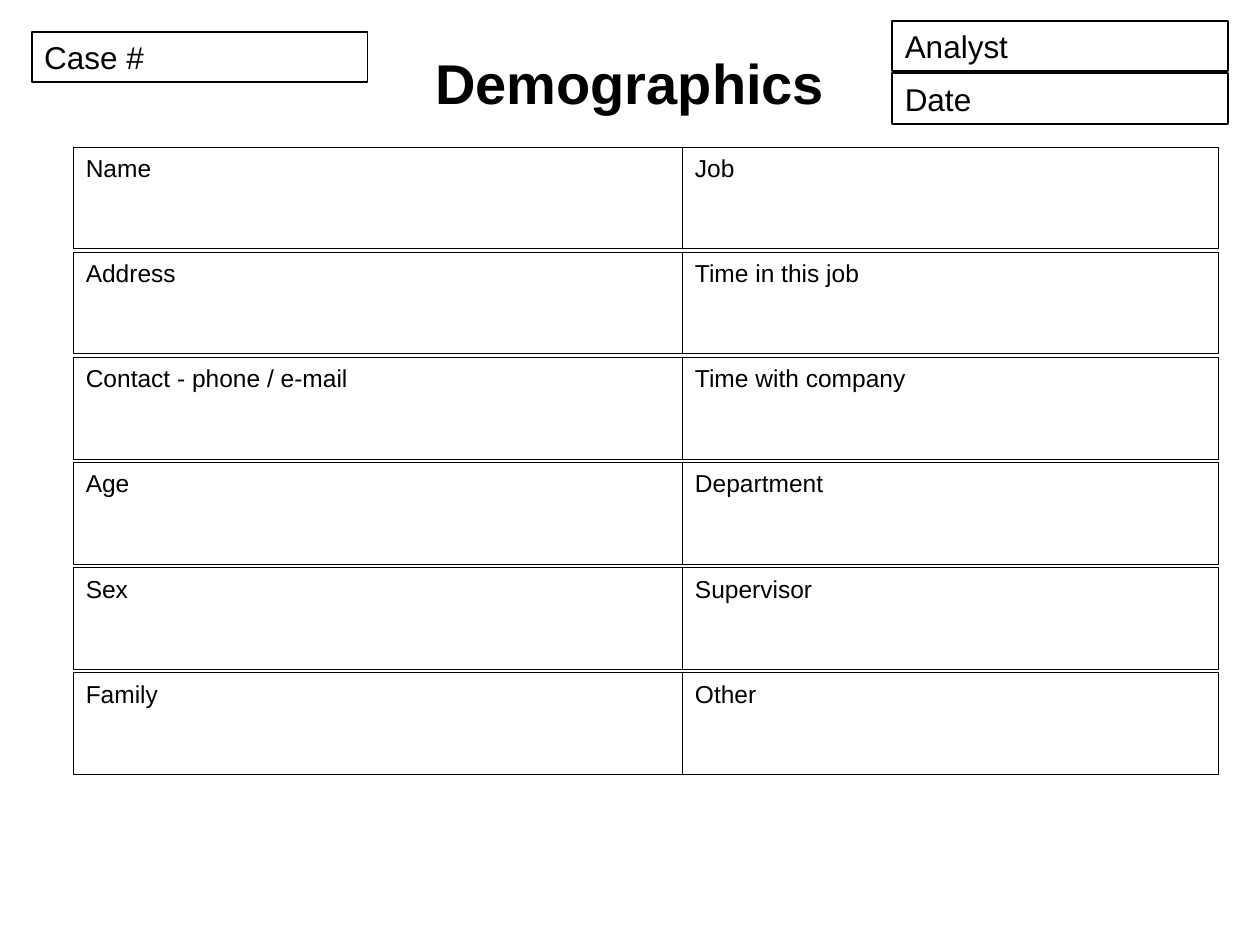
from dataclasses import dataclass

from pptx import Presentation
from pptx.dml.color import RGBColor
from pptx.enum.shapes import MSO_SHAPE
from pptx.enum.text import MSO_ANCHOR as Anchor, PP_ALIGN as Align
from pptx.util import Cm, Pt


@dataclass(frozen=True)
class Theme:
    """Colours, font, type sizes and line widths of the form."""
    ink: RGBColor = RGBColor(0, 0, 0)
    paper: RGBColor = RGBColor(255, 255, 255)
    font: str = "Arial"
    title_size: float = 32
    label_size: float = 18
    field_size: float = 14
    label_line: float = 1
    field_line: float = 0.25


THEME = Theme()

FIELD_ROWS = [
    ("Name", "Job"),
    ("Address", "Time in this job"),
    ("Contact - phone / e-mail", "Time with company"),
    ("Age", "Department"),
    ("Sex", "Supervisor"),
    ("Family", "Other"),
]


def write_text(shape, text, *, size, bold=False, align=Align.LEFT, anchor=Anchor.TOP):
    """Write one formatted paragraph into a shape."""
    frame = shape.text_frame
    frame.word_wrap = True
    frame.vertical_anchor = anchor
    paragraph = frame.paragraphs[0]
    paragraph.alignment = align
    run = paragraph.add_run()
    run.text = text
    run.font.name = THEME.font
    run.font.size = Pt(size)
    run.font.bold = bold
    run.font.color.rgb = THEME.ink


def add_entry_box(slide, text, left, top, width, height, *, size, line):
    """Add an outlined box with its label at the top left."""
    shape = slide.shapes.add_shape(
        MSO_SHAPE.RECTANGLE, Cm(left), Cm(top), Cm(width), Cm(height))
    shape.shadow.inherit = False
    shape.fill.background()
    shape.line.color.rgb = THEME.ink
    shape.line.width = Pt(line)
    write_text(shape, text, size=size)


def add_title(slide, text, left, top, width, height):
    """Add the centred heading."""
    box = slide.shapes.add_textbox(Cm(left), Cm(top), Cm(width), Cm(height))
    write_text(box, text, size=THEME.title_size, bold=True,
               align=Align.CENTER, anchor=Anchor.MIDDLE)


def add_label_stack(slide, labels, left, top, width, *, height=1.02, pitch=1.06):
    """Stack case label boxes downwards from the given corner."""
    for index, label in enumerate(labels):
        add_entry_box(slide, label, left, top + index * pitch, width, height,
                      size=THEME.label_size, line=THEME.label_line)


def add_field_grid(slide, rows, left, top, widths, *, height=2.05, pitch=2.12):
    """Lay out the form fields in adjoining columns and spaced rows."""
    for row_index, row in enumerate(rows):
        for column, label in enumerate(row):
            add_entry_box(slide, label, left + sum(widths[:column]),
                          top + row_index * pitch, widths[column], height,
                          size=THEME.field_size, line=THEME.field_line)


def main():
    """Build and save the demographics form."""
    presentation = Presentation()
    presentation.slide_width = Cm(25.4)
    presentation.slide_height = Cm(19.05)
    slide = presentation.slides.add_slide(presentation.slide_layouts[6])
    slide.background.fill.solid()
    slide.background.fill.fore_color.rgb = THEME.paper
    add_title(slide, "Demographics", 1.27, 0.76, 22.86, 1.78)
    add_field_grid(slide, FIELD_ROWS, 1.48, 2.96, (12.28, 10.8))
    add_label_stack(slide, ["Case #"], 0.64, 0.64, 6.77)
    add_label_stack(slide, ["Analyst", "Date"], 17.99, 0.42, 6.77)
    presentation.save("out.pptx")


if __name__ == "__main__":
    main()
